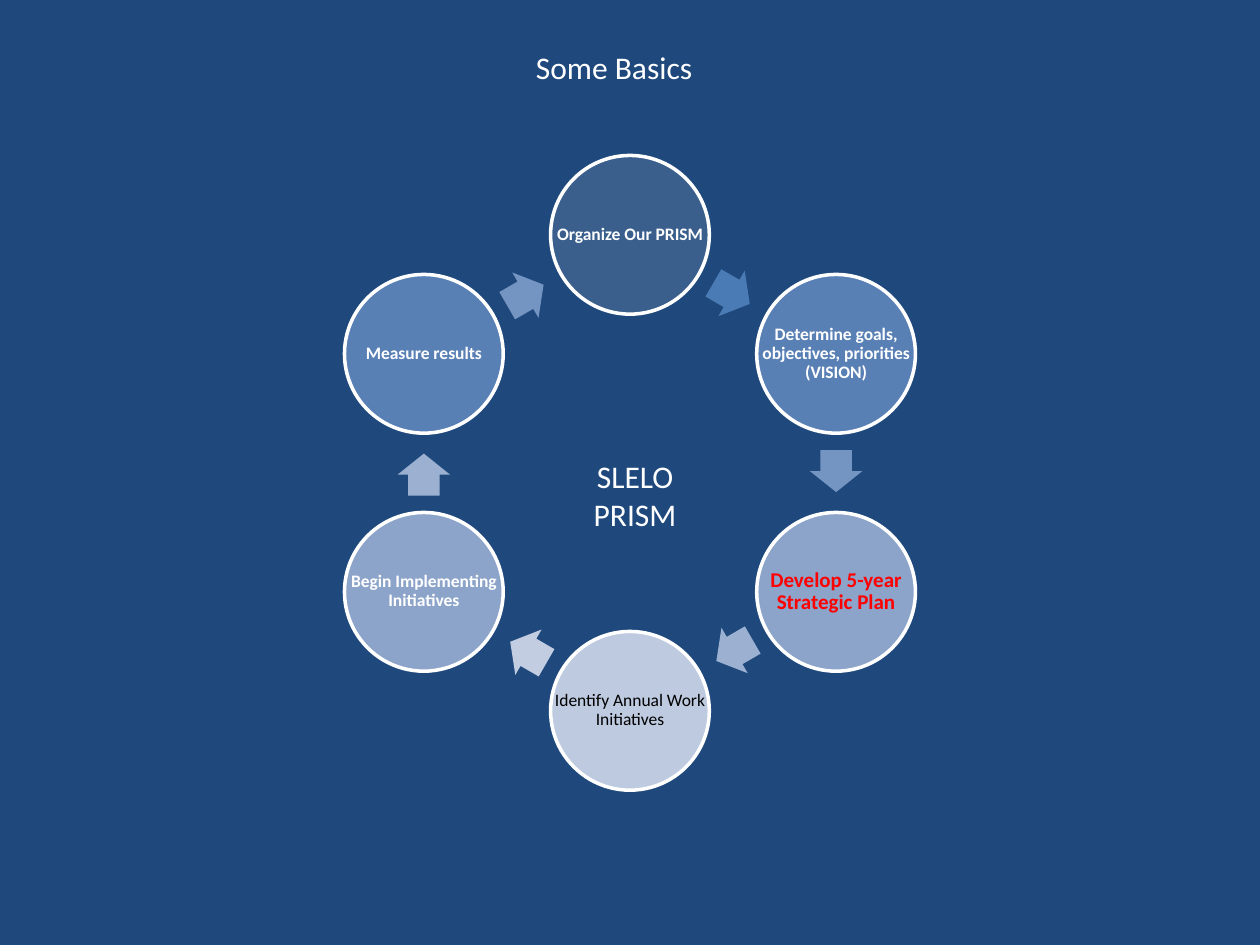
"""Build the PRISM planning cycle slide."""
from dataclasses import dataclass
from math import cos, radians, sin

from pptx import Presentation
from pptx.dml.color import RGBColor
from pptx.enum.shapes import MSO_SHAPE
from pptx.enum.text import MSO_ANCHOR, PP_ALIGN
from pptx.util import Pt


@dataclass(frozen=True)
class Theme:
    font: str = "Calibri"
    background: str = "1F497D"
    white: str = "FFFFFF"
    black: str = "000000"
    highlight: str = "FF0000"
    steps: tuple = ("3A5F8C", "5980B5", "8CA4C9", "BECADF", "8CA4C9", "5980B5")
    arrows: tuple = ("4B7BB5", "7495C2", "9CB1D1", "C2CDE1", "9CB1D1", "7495C2")
    heading: int = 18
    emphasis: int = 12
    label: int = 10


class SlideBuilder:
    def __init__(self, slide, theme):
        self.slide = slide
        self.theme = theme
        fill = slide.background.fill
        fill.solid()
        fill.fore_color.rgb = RGBColor.from_string(theme.background)

    def shape(self, kind, cx, cy, width, height, color):
        sp = self.slide.shapes.add_shape(
            kind, Pt(cx - width / 2), Pt(cy - height / 2), Pt(width), Pt(height))
        sp.shadow.inherit = False
        sp.fill.solid()
        sp.fill.fore_color.rgb = RGBColor.from_string(color)
        sp.line.fill.background()
        return sp

    def circle(self, cx, cy, size, color):
        sp = self.shape(MSO_SHAPE.OVAL, cx, cy, size, size, color)
        sp.line.color.rgb = RGBColor.from_string(self.theme.white)
        sp.line.width = Pt(2)

    def arrow(self, cx, cy, angle, color):
        sp = self.shape(MSO_SHAPE.RIGHT_ARROW, cx, cy, 24, 30, color)
        sp.adjustments[0] = 0.6
        sp.adjustments[1] = 0.5
        sp.rotation = angle

    def text(self, text, left, top, width, height, size, color):
        box = self.slide.shapes.add_textbox(Pt(left), Pt(top), Pt(width), Pt(height))
        tf = box.text_frame
        tf.word_wrap = True
        tf.text = text
        for p in tf.paragraphs:
            p.alignment = PP_ALIGN.CENTER
            for r in p.runs:
                r.font.name = self.theme.font
                r.font.size = Pt(size)
                r.font.color.rgb = RGBColor.from_string(color)
        return tf

    def label(self, text, cx, cy, side, size, color, bold):
        tf = self.text(text, cx - side / 2, cy - side / 2, side, side, size, color)
        tf.vertical_anchor = MSO_ANCHOR.MIDDLE
        tf.margin_left = tf.margin_right = tf.margin_top = tf.margin_bottom = Pt(1)
        p = tf.paragraphs[0]
        p.line_spacing = 0.9
        p.runs[0].font.bold = bold

    def cycle(self, steps, cx, cy, radius, size):
        turn = 360 / len(steps)
        arrow_radius = radius * cos(radians(turn / 2))
        lag = 1
        for i, (text, font_size, color, bold) in enumerate(steps):
            angle = radians(i * turn - 90)
            x, y = cx + radius * cos(angle), cy + radius * sin(angle)
            self.circle(x, y, size, self.theme.steps[i])
            self.label(text, x, y, size, font_size, color, bold)
            heading = (i + 0.5) * turn
            a = radians(heading)
            self.arrow(cx + arrow_radius * sin(a) - lag * cos(a),
                       cy - arrow_radius * cos(a) - lag * sin(a),
                       heading, self.theme.arrows[i])


def main():
    theme = Theme()
    prs = Presentation()
    prs.slide_width, prs.slide_height = Pt(720), Pt(540)
    s = SlideBuilder(prs.slides.add_slide(prs.slide_layouts[6]), theme)
    steps = [
        ("Organize Our PRISM", theme.label, theme.white, True),
        ("Determine goals, objectives, priorities (VISION)", theme.label, theme.white, True),
        ("Develop 5-year Strategic Plan", theme.emphasis, theme.highlight, True),
        ("Identify Annual Work Initiatives", theme.label, theme.black, False),
        ("Begin Implementing Initiatives", theme.label, theme.white, True),
        ("Measure results", theme.label, theme.white, True),
    ]
    s.cycle(steps, 360, 270.2, 136, 90.7)
    s.text("SLELO\nPRISM", 329.8, 257.8, 66.2, 51, theme.heading, theme.white)
    s.text("Some Basics", 210, 23.8, 282, 30, theme.heading, theme.white)
    prs.save("out.pptx")


if __name__ == "__main__":
    main()
